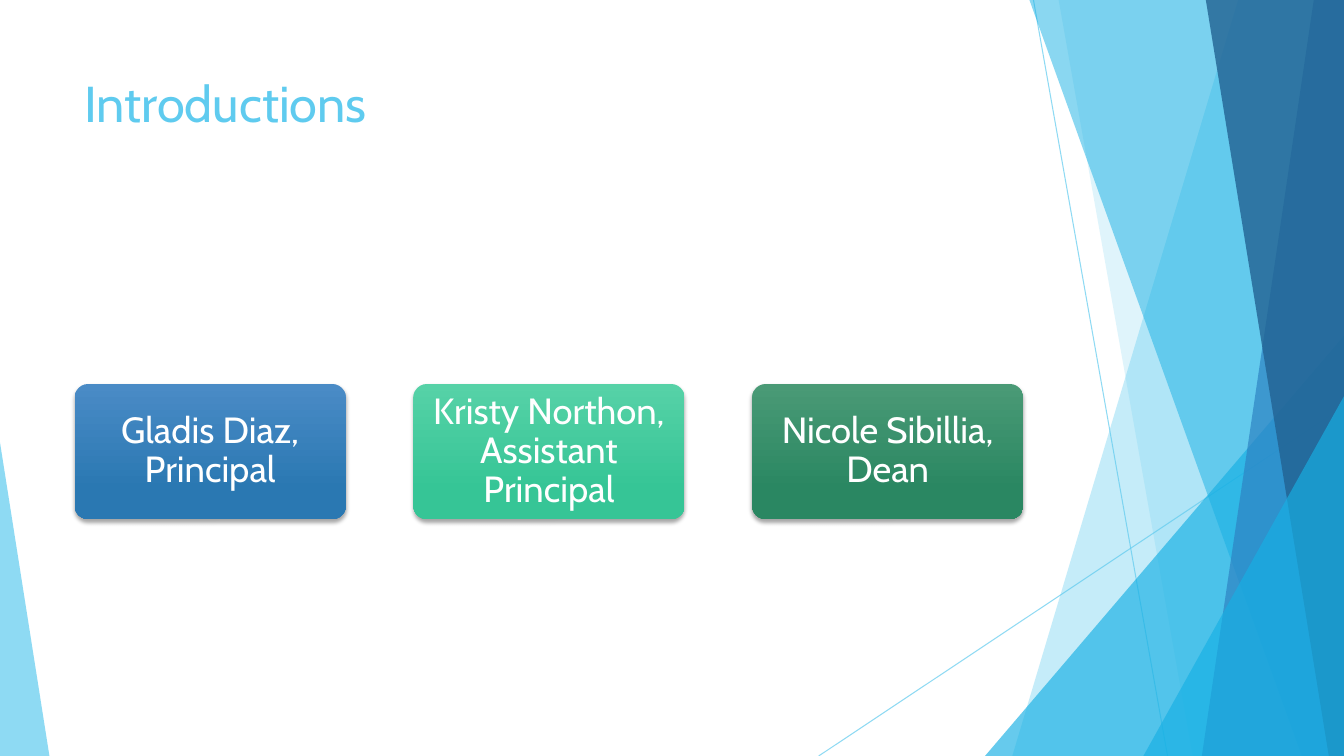
from dataclasses import dataclass

from lxml.etree import SubElement
from pptx import Presentation
from pptx.dml.color import RGBColor
from pptx.enum.shapes import MSO_CONNECTOR, MSO_SHAPE
from pptx.enum.text import MSO_ANCHOR, PP_ALIGN
from pptx.oxml.ns import qn
from pptx.util import Inches, Pt


@dataclass(frozen=True)
class Theme:
    font: str = "Cabin"
    title_size: int = 36
    card_size: int = 26
    sky: str = "5FCBEF"
    cyan: str = "17B0E4"
    blue: str = "2E83C3"
    navy: str = "226292"
    white: str = "FFFFFF"
    shadow: str = "000000"
    cards: tuple = (("4A8BC6", "2A78B2"), ("56D2A7", "36C596"), ("4A9A76", "2A8762"))


THEME = Theme()
WIDTH, HEIGHT = 13.33, 7.5
PEOPLE = ("Gladis Diaz, Principal", "Kristy Northon, Assistant Principal", "Nicole Sibillia, Dean")


def set_alpha(fill, percent):
    color = fill._xPr.find(".//" + qn("a:srgbClr"))
    SubElement(color, qn("a:alpha"), val=str(percent * 1000))


def style_facet(shape, color, percent):
    shape.shadow.inherit = False
    shape.line.fill.background()
    shape.fill.solid()
    shape.fill.fore_color.rgb = RGBColor.from_string(color)
    set_alpha(shape.fill, percent)


def add_ray(slide, start, end):
    connector = slide.shapes.add_connector(
        MSO_CONNECTOR.STRAIGHT, *map(Inches, start), *map(Inches, end))
    connector.line.width = Pt(0.75)
    connector.line.fill.solid()
    connector.line.color.rgb = RGBColor.from_string(THEME.sky)
    set_alpha(connector.line.fill, 70)
    SubElement(connector._element.spPr, qn("a:effectLst"))


def add_band(slide, top_x, bottom_x, right, height, color, percent):
    points = [(right, 0), (right, height), (bottom_x, height)]
    builder = slide.shapes.build_freeform(Inches(top_x), 0)
    builder.add_line_segments([(Inches(x), Inches(y)) for x, y in points], close=True)
    style_facet(builder.convert_to_shape(), color, percent)


def add_triangle(slide, left, top, width, height, apex, color, percent):
    shape = slide.shapes.add_shape(
        MSO_SHAPE.ISOSCELES_TRIANGLE, *map(Inches, (left, top, width, height)))
    shape.adjustments[0] = apex
    style_facet(shape, color, percent)


def add_backdrop(slide, width, height):
    def corner_triangle(side, rise):
        add_triangle(slide, width - side, height - rise, side, rise, 1, THEME.cyan, 66)

    def band(top_x, bottom_x, color, percent):
        add_band(slide, top_x, bottom_x, width, height, color, percent)

    add_ray(slide, (10.25, 0), (11.58, height))
    add_ray(slide, (width, 4.03), (8.12, height))
    band(12.28, 10.04, THEME.sky, 36)
    band(10.5, 11.83, THEME.sky, 20)
    corner_triangle(3.56, 4.17)
    band(10.21, 12.91, THEME.cyan, 50)
    band(13.03, 11.92, THEME.blue, 70)
    band(11.96, 13.18, THEME.navy, 80)
    corner_triangle(1.99, 3.57)
    add_triangle(slide, 0, height - 3.11, 0.49, 3.11, 0, THEME.sky, 70)


def write_text(frame, text, size, color):
    frame.word_wrap = True
    paragraph = frame.paragraphs[0]
    paragraph.text = text
    paragraph.font.name = THEME.font
    paragraph.font.size = Pt(size)
    paragraph.font.color.rgb = RGBColor.from_string(color)
    return paragraph


def add_title(slide, left, top, width, height, text):
    box = slide.shapes.add_textbox(*map(Inches, (left, top, width, height)))
    write_text(box.text_frame, text, THEME.title_size, THEME.sky)


def add_soft_shadow(shape):
    shape.shadow.inherit = False
    effects = shape._element.spPr.find(qn("a:effectLst"))
    shadow = SubElement(effects, qn("a:outerShdw"), blurRad=str(Pt(3)), dist=str(Pt(2)),
                        dir="5400000", algn="ctr", rotWithShape="0")
    color = SubElement(shadow, qn("a:srgbClr"), val=THEME.shadow)
    SubElement(color, qn("a:alpha"), val="35000")


def add_card(slide, left, top, width, height, text, colors):
    card = slide.shapes.add_shape(
        MSO_SHAPE.ROUNDED_RECTANGLE, *map(Inches, (left, top, width, height)))
    card.adjustments[0] = 0.1
    card.line.fill.background()
    card.fill.gradient()
    card.fill.gradient_angle = 270
    for stop, color, position in zip(card.fill.gradient_stops, colors, (0, 0.78)):
        stop.color.rgb = RGBColor.from_string(color)
        stop.position = position
    add_soft_shadow(card)
    frame = card.text_frame
    frame.margin_left = frame.margin_right = Inches(0.09)
    frame.margin_top = frame.margin_bottom = Inches(0.08)
    frame.vertical_anchor = MSO_ANCHOR.MIDDLE
    paragraph = write_text(frame, text, THEME.card_size, THEME.white)
    paragraph.alignment = PP_ALIGN.CENTER
    paragraph.line_spacing = 0.9


def add_people(slide, left, top, width, height):
    card_width = 2.69
    step = (width - card_width) / (len(PEOPLE) - 1)
    for index, (person, colors) in enumerate(zip(PEOPLE, THEME.cards)):
        add_card(slide, left + index * step, top, card_width, height, person, colors)


def main():
    presentation = Presentation()
    presentation.slide_width = Inches(WIDTH)
    presentation.slide_height = Inches(HEIGHT)
    slide = presentation.slides.add_slide(presentation.slide_layouts[6])
    add_backdrop(slide, WIDTH, HEIGHT)
    add_title(slide, 0.74, 0.67, 9.4, 1.44, "Introductions")
    add_people(slide, 0.74, 3.81, 9.41, 1.34)
    presentation.save("out.pptx")


if __name__ == "__main__":
    main()
